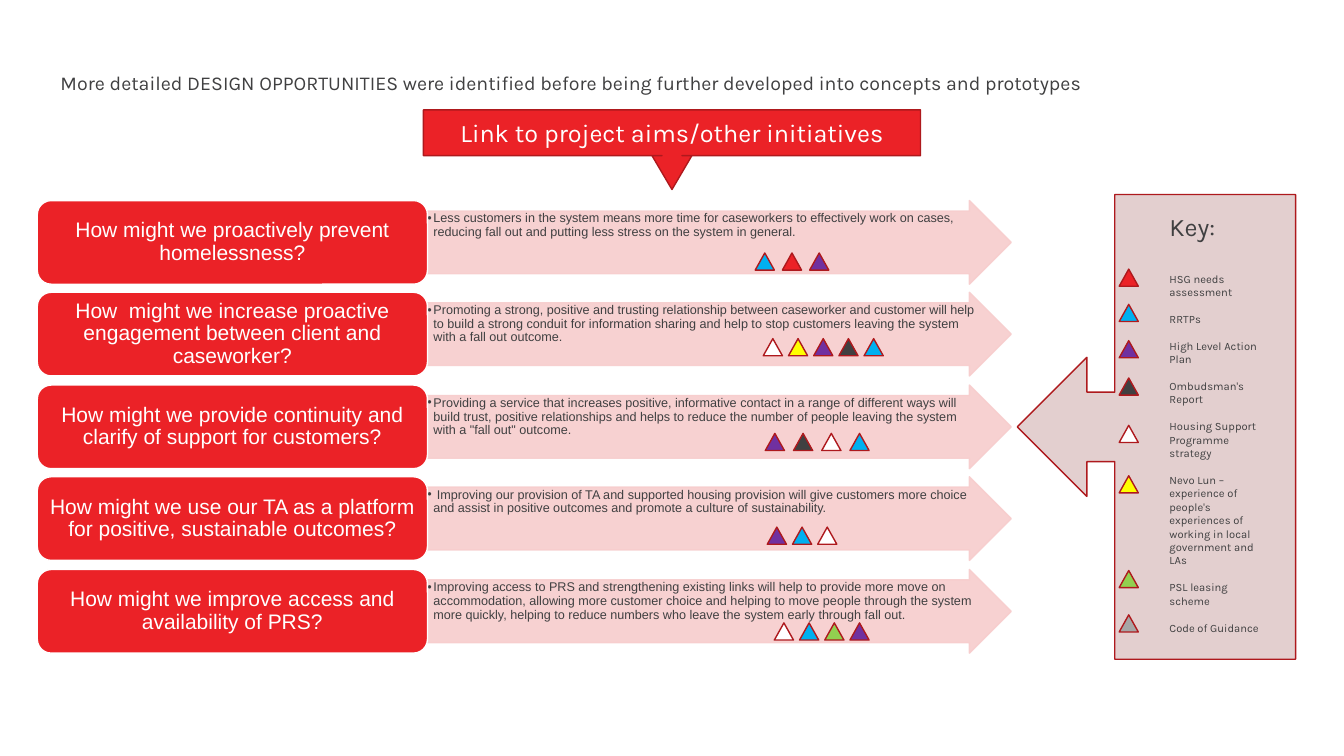
from pptx import Presentation
from pptx.dml.color import RGBColor
from pptx.enum.shapes import MSO_SHAPE as Shape
from pptx.enum.text import MSO_ANCHOR as Anchor, MSO_AUTO_SIZE as Fit, PP_ALIGN as Align
from pptx.oxml.ns import qn
from pptx.util import Pt
from lxml.etree import SubElement

PX = 9144
RED, EDGE, PINK, ROSE = "EB2227", "AE191D", "F7CDCD", "E3CFCF"
DARK, WHITE, BLUE, PLUM = "404041", "FFFFFF", "00B0F0", "7030A0"
GOLD, LIME, GREY = "FFFF00", "92D050", "A6A6A6"

ROWS = [
    ("How might we proactively prevent homelessness?",
     "Less customers in the system means more time for caseworkers to effectively work on cases, "
     "reducing fall out and putting less stress on the system in general.",
     (326, 52, 27), (BLUE, RED, PLUM)),
    ("How  might we increase proactive engagement between client and caseworker?",
     "Promoting a strong, positive and trusting relationship between caseworker and customer will "
     "help to build a strong conduit for information sharing and help to stop customers leaving the "
     "system with a fall out outcome.",
     (334, 46, 25), (WHITE, GOLD, PLUM, DARK, BLUE)),
    ("How might we provide continuity and clarify of support for customers?",
     "Providing a service that increases positive, informative contact in a range of different ways "
     "will build trust, positive relationships and helps to reduce the number of people leaving the "
     "system with a \"fall out\" outcome.",
     (336, 48, 28), (PLUM, DARK, WHITE, BLUE)),
    ("How might we use our TA as a platform for positive, sustainable outcomes?",
     " Improving our provision of TA and supported housing provision will give customers more choice "
     "and assist in positive outcomes and promote a culture of sustainability.",
     (338, 50, 25), (PLUM, BLUE, WHITE)),
    ("How might we improve access and availability of PRS?",
     "Improving access to PRS and strengthening existing links will help to provide more move on "
     "accommodation, allowing more customer choice and helping to move people through the system more "
     "quickly, helping to reduce numbers who leave the system early through fall out.",
     (345, 53, 25), (WHITE, BLUE, LIME, PLUM)),
]

KEY = [
    ("HSG needs assessment", RED, 74),
    ("RRTPs", BLUE, 109),
    ("High Level Action Plan", PLUM, 145),
    ("Ombudsman's Report", DARK, 182),
    ("Housing Support Programme strategy", WHITE, 229),
    ("Nevo Lun – experience of people's experiences of working in local government and LAs", GOLD, 279),
    ("PSL leasing scheme", LIME, 373),
    ("Code of Guidance", GREY, 417),
]


def hue(code):
    return RGBColor.from_string(code)


def apply(item, values):
    for name, value in values.items():
        setattr(item, name, value)


def place(item, box):
    apply(item, dict(zip(("left", "top", "width", "height"), (n * PX for n in box))))


def draw(slide, kind, box, fill, line):
    shape = slide.shapes.add_shape(kind, *(n * PX for n in box))
    shape.shadow.inherit = False
    shape.fill.solid()
    shape.fill.fore_color.rgb = hue(fill)
    shape.line.color.rgb = hue(line)
    shape.line.width = Pt(1)
    return shape


def frame(shape, pads=(10, 5, 10, 5), anchor=Anchor.TOP):
    text = shape.text_frame
    sides = ("margin_left", "margin_top", "margin_right", "margin_bottom")
    apply(text, dict(zip(sides, (n * PX for n in pads))))
    apply(text, {"word_wrap": True, "auto_size": Fit.NONE, "vertical_anchor": anchor})
    return text


def write(par, words, size, font, color, **form):
    apply(par, {"alignment": Align.LEFT, **form})
    run = par.add_run()
    run.text = words
    apply(run.font, {"size": Pt(size), "name": font})
    run.font.color.rgb = hue(color)


def mark(par, sign=None, gap=0):
    props = par._p.get_or_add_pPr()
    props.set("marL", str(gap * PX))
    props.set("indent", str(-gap * PX))
    if sign:
        SubElement(props, qn("a:buFont"), typeface="Arial")
        SubElement(props, qn("a:buChar"), char=sign)
    else:
        SubElement(props, qn("a:buNone"))


def fade(shape, share):
    for color in shape._element.spPr.iter(qn("a:srgbClr")):
        SubElement(color, qn("a:alpha"), val=str(share * 1000))


def flag(slide, left, top, fill):
    draw(slide, Shape.ISOSCELES_TRIANGLE, (left, top, 19, 17), fill, EDGE)


def head(slide, box):
    slide.shapes.title.element.getparent().remove(slide.shapes.title.element)
    body = slide.placeholders[1]
    place(body, box)
    par = frame(body).paragraphs[0]
    write(par, "More detailed DESIGN OPPORTUNITIES were identified before being "
          "further developed into concepts and prototypes", 14, "Karla", DARK,
          line_spacing=0.9, space_before=Pt(10))
    mark(par)


def banner(slide, box):
    shape = draw(slide, Shape.DOWN_ARROW_CALLOUT, box, RED, EDGE)
    for i, part in enumerate((0.25, 0.25, 0.425, 0.575)):
        shape.adjustments[i] = part
    par = frame(shape, anchor=Anchor.MIDDLE).paragraphs[0]
    write(par, "Link to project aims/other initiatives", 18, "Karla", WHITE, alignment=Align.CENTER)


def row(slide, box, title, note, grid, flags):
    left, top, width, height = box
    split = left + 386
    arrow = draw(slide, Shape.RIGHT_ARROW, (split, top, width - 386, height), PINK, PINK)
    arrow.adjustments[0] = 0.75
    fade(arrow, 90)
    par = frame(arrow, (1, 1, 3, 1)).paragraphs[0]
    write(par, note, 9, "Arial", DARK, line_spacing=0.9)
    mark(par, "•", 6)

    card = draw(slide, Shape.ROUNDED_RECTANGLE, (left, top, 387, height), RED, WHITE)
    par = frame(card, (6, 3, 6, 3), Anchor.MIDDLE).paragraphs[0]
    write(par, title, 15, "Arial", WHITE, alignment=Align.CENTER, line_spacing=0.9)

    start, drop, step = grid
    for i, fill in enumerate(flags):
        flag(slide, split + start + i * step, top + drop, fill)


def legend(slide, box):
    left, top, width, height = box
    draw(slide, Shape.LEFT_ARROW_CALLOUT, box, ROSE, EDGE)
    area = slide.shapes.add_textbox(*(n * PX for n in (left + 141, top + 12, 119, 434)))
    text = frame(area)
    write(text.paragraphs[0], "Key:", 18, "Karla", DARK, space_after=Pt(21.5))
    for words, fill, drop in KEY:
        write(text.add_paragraph(), words, 8, "Karla", DARK, space_after=Pt(9.6))
        flag(slide, left + 101, top + drop, fill)


def main():
    deck = Presentation()
    apply(deck, {"slide_width": 1333 * PX, "slide_height": 750 * PX})
    slide = deck.slides.add_slide(deck.slide_layouts[1])
    head(slide, (50, 68, 1244, 575))
    for i, parts in enumerate(ROWS):
        row(slide, (37, 199 + 366 * i // 4, 966, 83), *parts)
    banner(slide, (420, 109, 493, 79))
    legend(slide, (1009, 193, 276, 461))
    deck.save("out.pptx")


if __name__ == "__main__":
    main()
